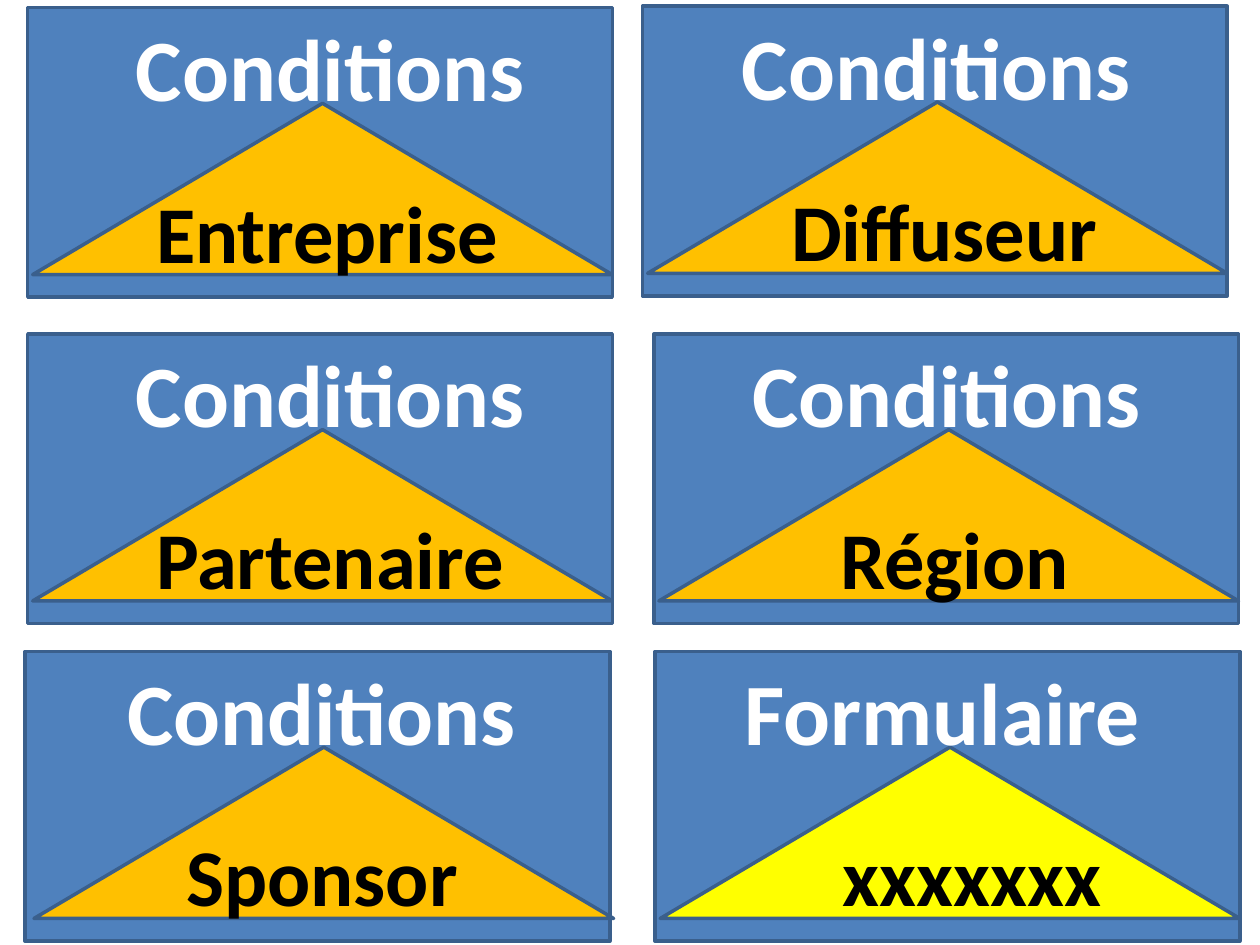
"""Build a slide of six cards, each with a heading and a labelled triangle."""
from dataclasses import dataclass

from pptx import Presentation
from pptx import util as u
from pptx.dml import color
from pptx.enum import shapes, text

PX = u.Inches(1) // 100
COLORS = {
    "card": "4F81BD",
    "outline": "3A5F8C",
    "amber": "FFC000",
    "yellow": "FFFF00",
    "heading": "FFFFFF",
    "label": "000000",
}
FONT = "Calibri"
CARD_SIZE = (464, 230)
TRIANGLE_SIZE = (460, 136)
LABEL_SIZE = (323, 88)
HEADING_WIDTH = 362
TRIANGLE_DROP, LABEL_DROP = 76, 134


@dataclass(frozen=True)
class Card:
    left: int
    top: int
    label: str
    label_left: int
    heading_left: int
    heading_height: int = 125
    heading: str = "Conditions"
    triangle_indent: int = 4
    triangle_fill: str = "amber"


CARDS = [
    Card(22, 6, "Entreprise", 114, 98, heading_height=94),
    Card(22, 265, "Partenaire", 114, 98),
    Card(510, 5, "Diffuseur", 618, 579),
    Card(519, 265, "Région", 657, 587, heading_height=94),
    Card(20, 517, "Sponsor", 138, 91, triangle_indent=7),
    Card(520, 517, "xxxxxxx", 659, 581, heading_height=94,
         heading="Formulaire", triangle_fill="yellow"),
]


def rgb(name: str) -> color.RGBColor:
    return color.RGBColor.from_string(COLORS[name])


def emu(*lengths: int) -> list[int]:
    return [length * PX for length in lengths]


def add_panel(slide, kind, left: int, top: int, size: tuple[int, int], fill: str) -> None:
    panel = slide.shapes.add_shape(kind, *emu(left, top, *size))
    panel.shadow.inherit = False
    panel.fill.solid()
    panel.fill.fore_color.rgb = rgb(fill)
    panel.line.color.rgb = rgb("outline")
    panel.line.width = u.Pt(2)


def add_caption(slide, wording: str, left: int, top: int, size: tuple[int, int],
                points: int, ink: str) -> None:
    frame = slide.shapes.add_textbox(*emu(left, top, *size)).text_frame
    frame.word_wrap = True
    frame.auto_size = text.MSO_AUTO_SIZE.SHAPE_TO_FIT_TEXT
    frame.text = wording
    font = frame.paragraphs[0].runs[0].font
    font.name, font.size, font.bold = FONT, u.Pt(points), True
    font.color.rgb = rgb(ink)


def draw_card(slide, card: Card) -> None:
    add_panel(slide, shapes.MSO_SHAPE.RECTANGLE, card.left, card.top, CARD_SIZE, "card")
    add_panel(slide, shapes.MSO_SHAPE.ISOSCELES_TRIANGLE, card.left + card.triangle_indent,
              card.top + TRIANGLE_DROP, TRIANGLE_SIZE, card.triangle_fill)
    add_caption(slide, card.label, card.label_left, card.top + LABEL_DROP,
                LABEL_SIZE, 46, "label")
    add_caption(slide, card.heading, card.heading_left, card.top,
                (HEADING_WIDTH, card.heading_height), 50, "heading")


def main() -> None:
    deck = Presentation()
    deck.slide_width, deck.slide_height = emu(1000, 750)
    slide = deck.slides.add_slide(deck.slide_layouts[6])
    for card in CARDS:
        draw_card(slide, card)
    deck.save("out.pptx")


if __name__ == "__main__":
    main()
